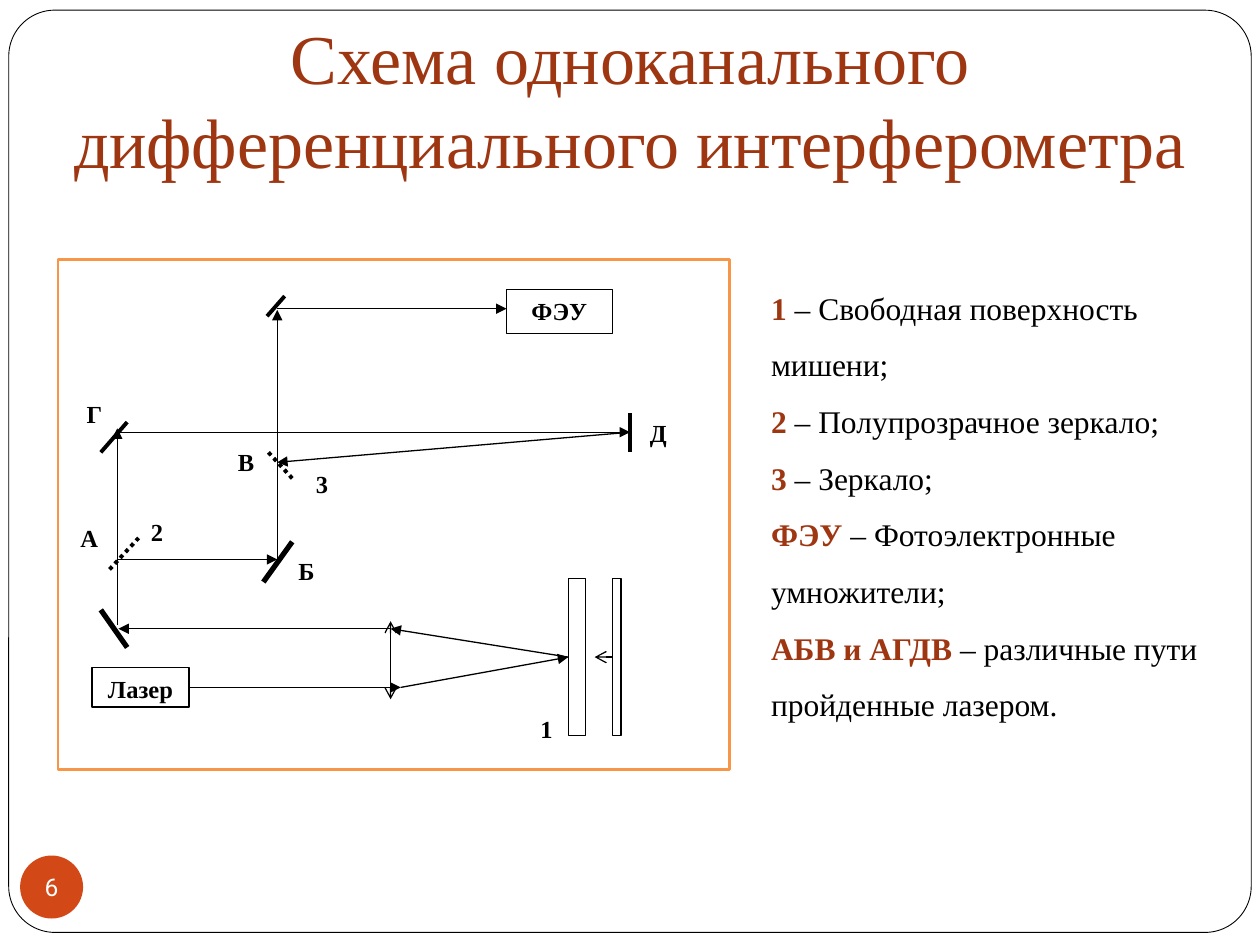
"""Build a slide with the scheme of a single-channel differential interferometer."""
from pptx import Presentation
from pptx.dml.color import RGBColor
from pptx.enum.dml import MSO_LINE
from pptx.enum.shapes import MSO_CONNECTOR, MSO_SHAPE
from pptx.enum.text import MSO_ANCHOR, MSO_AUTO_SIZE, PP_ALIGN
from pptx.oxml.ns import qn
from pptx.util import Pt
from lxml import etree

LINE = MSO_CONNECTOR.STRAIGHT
RECT, ROUND, OVAL = MSO_SHAPE.RECTANGLE, MSO_SHAPE.ROUNDED_RECTANGLE, MSO_SHAPE.OVAL
TOP, MID, BOTTOM = MSO_ANCHOR.TOP, MSO_ANCHOR.MIDDLE, MSO_ANCHOR.BOTTOM
LEFT, CENTER = PP_ALIGN.LEFT, PP_ALIGN.CENTER
FIXED = MSO_AUTO_SIZE.NONE
DOTS = MSO_LINE.ROUND_DOT
SERIF = "Times New Roman"
HEX = {"black": "000000", "white": "FFFFFF", "rust": "9E3611",
       "badge": "D34817", "orange": "F79646"}
COLOR = {name: RGBColor.from_string(code) for name, code in HEX.items()}


def box(x, y, w, h, text="", fill="white", edge=None, width=0.75, kind=RECT, align=CENTER):
    shape = slide.shapes.add_shape(kind, Pt(x), Pt(y), Pt(w), Pt(h))
    shape.shadow.inherit = False
    if fill:
        shape.fill.solid()
        shape.fill.fore_color.rgb = COLOR[fill]
    else:
        shape.fill.background()
    if edge:
        shape.line.color.rgb = COLOR[edge]
        shape.line.width = Pt(width)
    else:
        shape.line.fill.background()
    if text:
        frame = shape.text_frame
        frame.text = text
        frame.vertical_anchor = TOP
        para = frame.paragraphs[0]
        para.alignment = align
        para.space_after = Pt(10)
        para.font.name, para.font.size, para.font.bold = SERIF, Pt(14), True
        para.font.color.rgb = COLOR["black"]
    return shape


def ray(x1, y1, x2, y2, width=0.75, dash=None, head=None, tail=None):
    line = slide.shapes.add_connector(LINE, Pt(x1), Pt(y1), Pt(x2), Pt(y2))
    line.line.color.rgb = COLOR["black"]
    line.line.width = Pt(width)
    if dash:
        line.line.dash_style = dash
    props = line.element.spPr
    for tag, tip in (("a:headEnd", head), ("a:tailEnd", tail)):
        if tip:
            etree.SubElement(props.find(qn("a:ln")), qn(tag), type=tip)
    etree.SubElement(props, qn("a:effectLst"))
    return line


deck = Presentation()
deck.slide_width, deck.slide_height = Pt(720), Pt(540)
slide = deck.slides.add_slide(deck.slide_layouts[1])

title = slide.shapes.title
title.left, title.top, title.width, title.height = Pt(0), Pt(0), Pt(720), Pt(111.6)
frame = title.text_frame
frame.text = "Схема одноканального дифференциального интерферометра"
frame.auto_size, frame.vertical_anchor = FIXED, BOTTOM
frame.margin_bottom = Pt(7.2)
para = frame.paragraphs[0]
para.alignment = CENTER
para.font.name, para.font.size = SERIF, Pt(40)
para.font.color.rgb = COLOR["rust"]

border = box(5, 5.8, 710, 527, edge="black", width=0.5, kind=ROUND)
border.adjustments[0] = 0.05
title.element.addprevious(border.element)

legend = [
    ("1", "Свободная поверхность мишени;"),
    ("2", "Полупрозрачное зеркало;"),
    ("3", "Зеркало;"),
    ("ФЭУ", "Фотоэлектронные умножители;"),
    ("АБВ и АГДВ", "различные пути пройденные лазером."),
]
body = slide.placeholders[1]
body.left, body.top, body.width, body.height = Pt(433.4), Pt(150.5), Pt(260.6), Pt(312.5)
frame = body.text_frame
frame.auto_size, frame.vertical_anchor = FIXED, TOP
for i, (key, note) in enumerate(legend):
    para = frame.add_paragraph() if i else frame.paragraphs[0]
    para.line_spacing, para.space_before = 1.5, Pt(0)
    para.font.name, para.font.size = SERIF, Pt(18)
    for text, bold, color in ((key, True, "rust"), (f" – {note}", False, "black")):
        run = para.add_run()
        run.text = text
        run.font.bold = bold
        run.font.color.rgb = COLOR[color]
    props = para._p.get_or_add_pPr()
    props.set("marL", "0")
    props.set("indent", "0")
    props.insert_element_before(etree.Element(qn("a:buNone")), "a:tabLst", "a:defRPr", "a:extLst")

badge = box(11.5, 488.9, 36, 36, "6", fill="badge", kind=OVAL)
frame = badge.text_frame
frame.margin_left = frame.margin_right = frame.margin_top = frame.margin_bottom = Pt(0)
frame.vertical_anchor, frame.word_wrap = MID, False
para = frame.paragraphs[0]
para.space_after = Pt(0)
para.font.name, para.font.bold = "Roboto", False
para.font.color.rgb = COLOR["white"]

box(33.1, 148.3, 383.8, 291.6, fill=None, edge="orange", width=1.5)
box(289.4, 165.6, 60.5, 25.2, "ФЭУ", edge="black")
laser = box(52.6, 381.6, 55.4, 22.4, "Лазер", edge="black")
target = box(324.7, 330.5, 10, 90, edge="black")
foil = box(350, 330.5, 5, 90, edge="black")

labels = [("1", 301.7, 404.6), ("2", 79.2, 291.6), ("3", 173.5, 264.2), ("А", 38.9, 295.2),
          ("Б", 163.4, 313.9), ("В", 128.9, 252), ("Г", 42.5, 224.6), ("Д", 364.3, 235.4)]
for text, x, y in labels:
    box(x, y, 20, 23, text, align=LEFT)

mirrors = [
    (57.6, 348.5, 72.7, 370, 3, None),
    (167, 309.6, 150.5, 332.6, 3, None),
    (57.6, 258.5, 72.7, 241.2, 2.25, None),
    (360, 236.2, 360, 258.5, 2.25, None),
    (152.6, 180.7, 162.7, 169.2, 2.25, None),
    (62.6, 325.4, 79.2, 307.4, 2.25, DOTS),
    (153.4, 258.5, 168.5, 275, 2.25, DOTS),
]
for mirror in mirrors:
    ray(*mirror)

beams = [
    (67, 357, 67, 244.8),
    (67.7, 319.7, 158.4, 319.7),
    (158.4, 320.4, 158.4, 177.1),
    (67.7, 247, 360, 247),
    (360, 247, 158.4, 264.2),
    (158.4, 176.4, 289.4, 176.4),
    (223.2, 359.3, 67.7, 359.3),
]
for beam in beams:
    ray(*beam, tail="triangle")

ray(108, 392.8, 229, 392.8, tail="triangle").begin_connect(laser, 3)
ray(229, 392.8, 324.7, 375.5, tail="triangle").end_connect(target, 1)
ray(324.7, 375.5, 223.2, 359.3, tail="triangle").begin_connect(target, 1)
ray(350, 375.5, 339.8, 375.5, tail="arrow").begin_connect(foil, 1)
ray(223.2, 355, 223.2, 399.6, head="arrow", tail="arrow")

deck.save("out.pptx")
